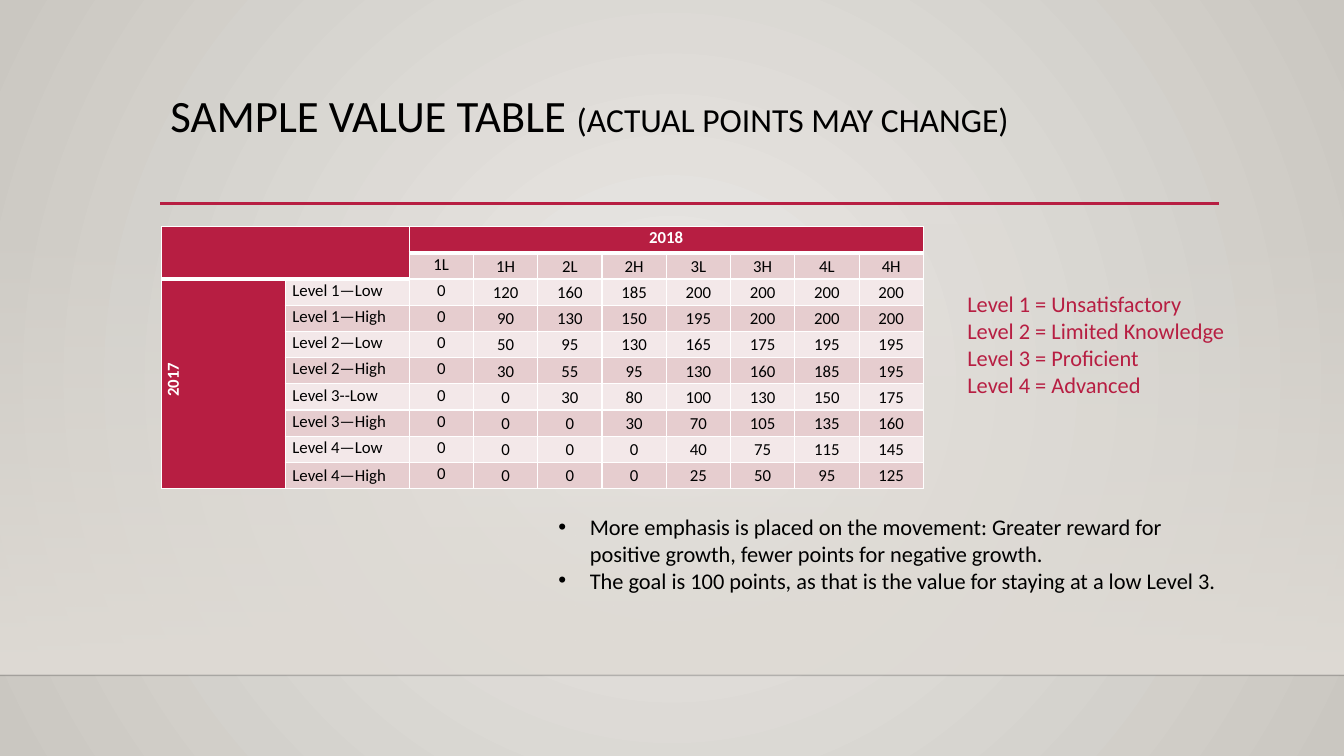
from dataclasses import dataclass

from lxml.etree import SubElement
from pptx import Presentation
from pptx.dml.color import RGBColor as Rgb
from pptx.enum.shapes import MSO_CONNECTOR as Connector, MSO_SHAPE as Preset
from pptx.enum.text import MSO_ANCHOR as Anchor, MSO_AUTO_SIZE as AutoSize, PP_ALIGN as Align
from pptx.oxml.ns import qn
from pptx.util import Cm, Pt


@dataclass(frozen=True)
class Theme:
    font: str = "Calibri"
    accent: str = "B71E42"
    ink: str = "000000"
    white: str = "FFFFFF"
    band: str = "DFDBD5"
    glow: str = "ECEAE7"
    edge: str = "CAC7C1"
    horizon: str = "000001"
    row_dark: str = "E6CDCF"
    row_light: str = "F3E8E9"
    title_size: int = 32
    subtitle_size: int = 24
    body_size: int = 16
    table_size: int = 12


class SlideBuilder:
    def __init__(self, slide, theme):
        self.slide = slide
        self.theme = theme

    def style(self, paragraph, size, color, bold=None):
        font = paragraph.font
        font.name = self.theme.font
        font.color.rgb = Rgb.from_string(color)
        font.bold = bold
        if size:
            font.size = Pt(size)

    def gradient(self, fill, start, end):
        fill.gradient()
        for stop, color, position in zip(fill.gradient_stops, (start, end), (0, 1)):
            stop.color.rgb = Rgb.from_string(color)
            stop.position = position

    def alpha(self, element, percent):
        color = next(element.iter(qn("a:srgbClr")))
        SubElement(color, qn("a:alpha"), val=str(percent * 1000))

    def background(self):
        self.gradient(self.slide.background.fill, self.theme.glow, self.theme.edge)
        gradient = next(self.slide.element.iter(qn("a:gradFill")))
        gradient.remove(gradient.find(qn("a:lin")))
        circle = SubElement(gradient, qn("a:path"), path="circle")
        SubElement(circle, qn("a:fillToRect"), {side: "50000" for side in "ltrb"})

    def fading_band(self, left, top, width, height):
        shape = self.slide.shapes.add_shape(
            Preset.RECTANGLE, Cm(left), Cm(top), Cm(width), Cm(height))
        shape.shadow.inherit = False
        shape.line.fill.background()
        self.gradient(shape.fill, self.theme.band, self.theme.band)
        shape.fill.gradient_angle = 270
        self.alpha(shape.element, 0)

    def rule(self, left, right, y, color, weight, opacity=100):
        line = self.slide.shapes.add_connector(
            Connector.STRAIGHT, Cm(left), Cm(y), Cm(right), Cm(y))
        line.line.color.rgb = Rgb.from_string(color)
        line.line.width = Pt(weight)
        if opacity < 100:
            self.alpha(line.element, opacity)
        SubElement(line.element.spPr, qn("a:effectLst"))

    def placeholder(self, index, left, top, width, height):
        shape = self.slide.placeholders[index]
        shape.left, shape.top, shape.width, shape.height = map(Cm, (left, top, width, height))
        frame = shape.text_frame
        frame.word_wrap = True
        frame.auto_size = AutoSize.NONE
        frame.vertical_anchor = Anchor.TOP
        self.slide.shapes.element.append(shape.element)  # in front of the band
        return frame

    def title(self, parts, *box):
        paragraph = self.placeholder(0, *box).paragraphs[0]
        paragraph.alignment = Align.LEFT
        paragraph.line_spacing = 0.9
        self.style(paragraph, None, self.theme.ink, False)
        for text, size in parts:
            run = paragraph.add_run()
            run.text = text
            run.font.size = Pt(size)

    def bullets(self, lines, *box):
        frame = self.placeholder(1, *box)
        frame.text = "\n".join(lines)
        for paragraph in frame.paragraphs:
            properties = paragraph._p.get_or_add_pPr()
            properties.set("marL", str(Cm(0.79)))
            properties.set("indent", str(-Cm(0.79)))
            SubElement(properties, qn("a:buFont"), typeface="Arial")
            SubElement(properties, qn("a:buChar"), char="•")
            paragraph.space_before = Pt(0)
            self.style(paragraph, self.theme.body_size, self.theme.ink)

    def text(self, lines, left, top, width, height):
        frame = self.slide.shapes.add_textbox(
            Cm(left), Cm(top), Cm(width), Cm(height)).text_frame
        frame.word_wrap = True
        frame.text = "\n".join(lines)
        for paragraph in frame.paragraphs:
            self.style(paragraph, self.theme.body_size, self.theme.accent)

    def cell(self, cell, text, fill, color, bold, align, anchor, bottom=1):
        properties = cell._tc.get_or_add_tcPr()
        for side in "LRTB":
            weight = bottom if side == "B" else 1
            border = SubElement(properties, qn(f"a:ln{side}"), w=str(Pt(weight)))
            solid = SubElement(border, qn("a:solidFill"))
            SubElement(solid, qn("a:srgbClr"), val=self.theme.white)
        cell.fill.solid()
        cell.fill.fore_color.rgb = Rgb.from_string(fill)
        cell.margin_left = cell.margin_right = Cm(0.18)
        cell.margin_top = cell.margin_bottom = 0
        cell.vertical_anchor = anchor
        cell.text = text
        paragraph = cell.text_frame.paragraphs[0]
        paragraph.alignment = align
        paragraph.line_spacing = 1.07
        self.style(paragraph, self.theme.table_size, color, bold)

    def value_table(self, grid, merges, left, top, widths, row_height):
        theme = self.theme
        table = self.slide.shapes.add_table(
            len(grid), len(widths), Cm(left), Cm(top),
            Cm(sum(widths)), Cm(row_height * len(grid))).table
        table.first_row = table.horz_banding = False
        for column, width in zip(table.columns, widths):
            column.width = Cm(width)
        for row in table.rows:
            row.height = Cm(row_height)
        for i, values in enumerate(grid):
            for j, value in enumerate(values):
                header = i == 0 or j == 0 or (i == 1 and j == 1)
                band = theme.row_dark if i % 2 else theme.row_light
                middle = j == 0 or j > 2 or (j == 1 and i == len(grid) - 1)
                self.cell(
                    table.cell(i, j), str(value),
                    theme.accent if header else band,
                    theme.white if header else theme.ink, header,
                    Align.LEFT if j == 1 else Align.CENTER,
                    Anchor.MIDDLE if middle and i else Anchor.TOP,
                    bottom=1 if i else 3)
        for first, last in merges:
            table.cell(*first).merge(table.cell(*last))
        # Row-group year reads upwards
        year = table.cell(2, 0)
        year._tc.get_or_add_tcPr().set("vert", "vert270")
        year.text_frame.paragraphs[0]._p.get_or_add_pPr().set("marL", str(Cm(0.2)))


def main():
    presentation = Presentation()
    presentation.slide_width, presentation.slide_height = Cm(33.87), Cm(19.05)
    theme = Theme()
    slide = presentation.slides.add_slide(presentation.slide_layouts[1])
    builder = SlideBuilder(slide, theme)

    # Backdrop
    builder.background()
    builder.fading_band(0, 5.61, 33.87, 11.4)
    builder.rule(0, 33.87, 17.02, theme.horizon, 1, opacity=20)
    builder.rule(4.04, 30.73, 5.13, theme.accent, 2.5)

    # Title
    builder.title([("SAMPLE VALUE TABLE ", theme.title_size),
                   ("(ACTUAL POINTS MAY CHANGE)", theme.subtitle_size)],
                  4.04, 2.24, 26.67, 2.92)

    # Points by 2017 level (rows) and 2018 level (columns)
    points = {
        "Level 1—Low": (0, 120, 160, 185, 200, 200, 200, 200),
        "Level 1—High": (0, 90, 130, 150, 195, 200, 200, 200),
        "Level 2—Low": (0, 50, 95, 130, 165, 175, 195, 195),
        "Level 2—High": (0, 30, 55, 95, 130, 160, 185, 195),
        "Level 3--Low": (0, 0, 30, 80, 100, 130, 150, 175),
        "Level 3—High": (0, 0, 0, 30, 70, 105, 135, 160),
        "Level 4—Low": (0, 0, 0, 0, 40, 75, 115, 145),
        "Level 4—High": (0, 0, 0, 0, 25, 50, 95, 125),
    }
    levels = [f"{level}{half}" for level in range(1, 5) for half in "LH"]
    grid = [["", "", "2018"] + [""] * 7, ["", ""] + levels]
    grid += [["", label, *values] for label, values in points.items()]
    grid[2][0] = "2017"
    merges = [((0, 0), (1, 1)), ((0, 2), (0, 9)), ((2, 0), (9, 0))]
    builder.value_table(grid, merges, 4.07, 5.71, [3.12] * 2 + [1.62] * 8, 0.66)

    # Notes on the goal and key to the levels
    builder.bullets(["More emphasis is placed on the movement: Greater reward for "
                     "positive growth, fewer points for negative growth.",
                     "The goal is 100 points, as that is the value for staying at a low Level 3."],
                    13.82, 12.8, 17.3, 2.31)
    builder.text(["Level 1 = Unsatisfactory", "Level 2 = Limited Knowledge",
                  "Level 3 = Proficient", "Level 4 = Advanced"], 24.13, 7.19, 7.42, 3)

    presentation.save("out.pptx")


if __name__ == "__main__":
    main()
